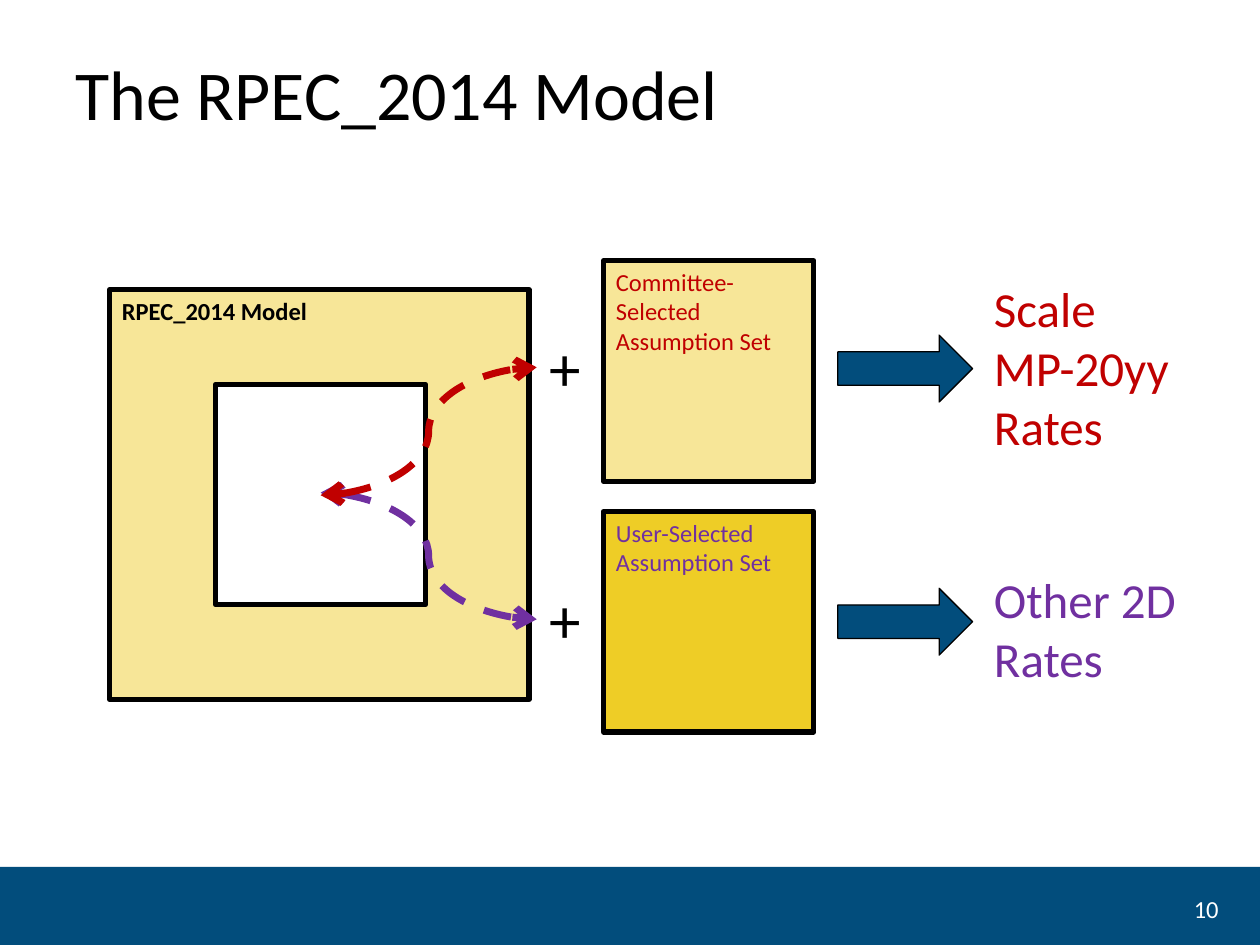
import pptx
import pptx.util
import pptx.dml.color
import pptx.enum.dml
import pptx.enum.shapes
import pptx.enum.text
import pptx.oxml
import pptx.oxml.ns

Pt = pptx.util.Pt
SHAPE = pptx.enum.shapes.MSO_SHAPE
ALIGN = pptx.enum.text.PP_ALIGN
ANCHOR = pptx.enum.text.MSO_ANCHOR

# Content
TITLE = "The RPEC_2014 Model"
MODEL = "RPEC_2014 Model"
PAGE = "10"
NAVY, CREAM, GOLD = "024D7C", "F7E698", "EECD26"
BLACK, WHITE, RED, PURPLE = "000000", "FFFFFF", "C00000", "7030A0"

# Lower row first, so that the red curve lies over the purple one
ROWS = [
    {"set": ["User-Selected", "Assumption Set"], "rates": ["Other 2D", "Rates"],
     "fill": GOLD, "ink": PURPLE,
     "box": 292.3, "arrow": 336.2, "plus": 328.3, "out": 321.8, "start": 281.5},
    {"set": ["Committee-Selected Assumption Set"], "rates": ["Scale", "MP-20yy", "Rates"],
     "fill": CREAM, "ink": RED,
     "box": 149, "arrow": 191.5, "plus": 184.3, "out": 155.5, "start": 283},
]

# Geometry
WIDE, HIGH = 720, 540
SIDE = (120.2, 126)
PLUS = (306.7, 32.4, 51.2)
HOLE = (123.1, 219.6)


def tint(text):
    return pptx.dml.color.RGBColor.from_string(text)


def write(shape, lines, size, ink, bold=False, align=ALIGN.LEFT, anchor=ANCHOR.TOP, lead=None):
    frame = shape.text_frame
    frame.word_wrap = True
    frame.vertical_anchor = anchor
    frame.text = "\n".join(lines)
    for para in frame.paragraphs:
        para.alignment = align
        if lead:
            para.line_spacing = lead
        font = para.font
        font.name, font.size, font.bold = "Calibri", Pt(size), bold
        font.color.rgb = tint(ink)


def block(kind, x, y, w, h, fill, line=0):
    shape = slide.shapes.add_shape(kind, Pt(x), Pt(y), Pt(w), Pt(h))
    shape.shadow.inherit = False
    shape.fill.solid()
    shape.fill.fore_color.rgb = tint(fill)
    if line:
        shape.line.color.rgb = tint(BLACK)
        shape.line.width = Pt(line)
    else:
        shape.line.fill.background()
    return shape


def label(x, y, w, h, lines, size, ink, **look):
    box = slide.shapes.add_textbox(Pt(x), Pt(y), Pt(w), Pt(h))
    write(box, lines, size, ink, **look)


def curve(x, y, to_x, to_y, ink):
    link = slide.shapes.add_connector(
        pptx.enum.shapes.MSO_CONNECTOR.CURVE, Pt(x), Pt(y), Pt(to_x), Pt(to_y))
    link.line.color.rgb = tint(ink)
    link.line.width = Pt(4)
    link.line.dash_style = pptx.enum.dml.MSO_LINE.DASH
    props = link._element.spPr
    stroke = props.find(pptx.oxml.ns.qn("a:ln"))
    for end in ("headEnd", "tailEnd"):
        stroke.append(pptx.oxml.parse_xml(
            f'<a:{end} {pptx.oxml.ns.nsdecls("a")} type="arrow"/>'))
    props.append(pptx.oxml.parse_xml(f'<a:effectLst {pptx.oxml.ns.nsdecls("a")}/>'))


deck = pptx.Presentation()
deck.slide_width, deck.slide_height = Pt(WIDE), Pt(HIGH)
slide = deck.slides.add_slide(deck.slide_layouts[6])

# Footer band, page number and title
block(SHAPE.RECTANGLE, 0, 495.4, WIDE, 46.8, NAVY)
label(665.3, 511.2, 38.2, 15.8, [PAGE], 14, WHITE, align=ALIGN.RIGHT, anchor=ANCHOR.MIDDLE)
label(36, 21.6, 648, 68.4, [TITLE], 40, BLACK, anchor=ANCHOR.MIDDLE, lead=0.9)

# Model with its open slot
model = block(SHAPE.RECTANGLE, 62.6, 165.6, 239.8, 234, CREAM, 3)
write(model, [MODEL], 14, BLACK, bold=True)
block(SHAPE.RECTANGLE, *HOLE, *SIDE, WHITE, 3)

# One row per assumption set: plus, set, arrow, rates, curve
left, width, height = PLUS
for row in ROWS:
    label(left, row["plus"], width, height, ["+"], 36, BLACK)
    box = block(SHAPE.RECTANGLE, 344.9, row["box"], *SIDE, row["fill"], 3)
    write(box, row["set"], 14, row["ink"])
    block(SHAPE.RIGHT_ARROW, 478.8, row["arrow"], 77, 38.2, NAVY, 0.75)
    label(560.9, row["out"], 123.1, 108.7, row["rates"], 28, row["ink"])
    curve(HOLE[0] + SIDE[0] / 2, row["start"], left, row["plus"] + height / 2, row["ink"])

deck.save("out.pptx")
